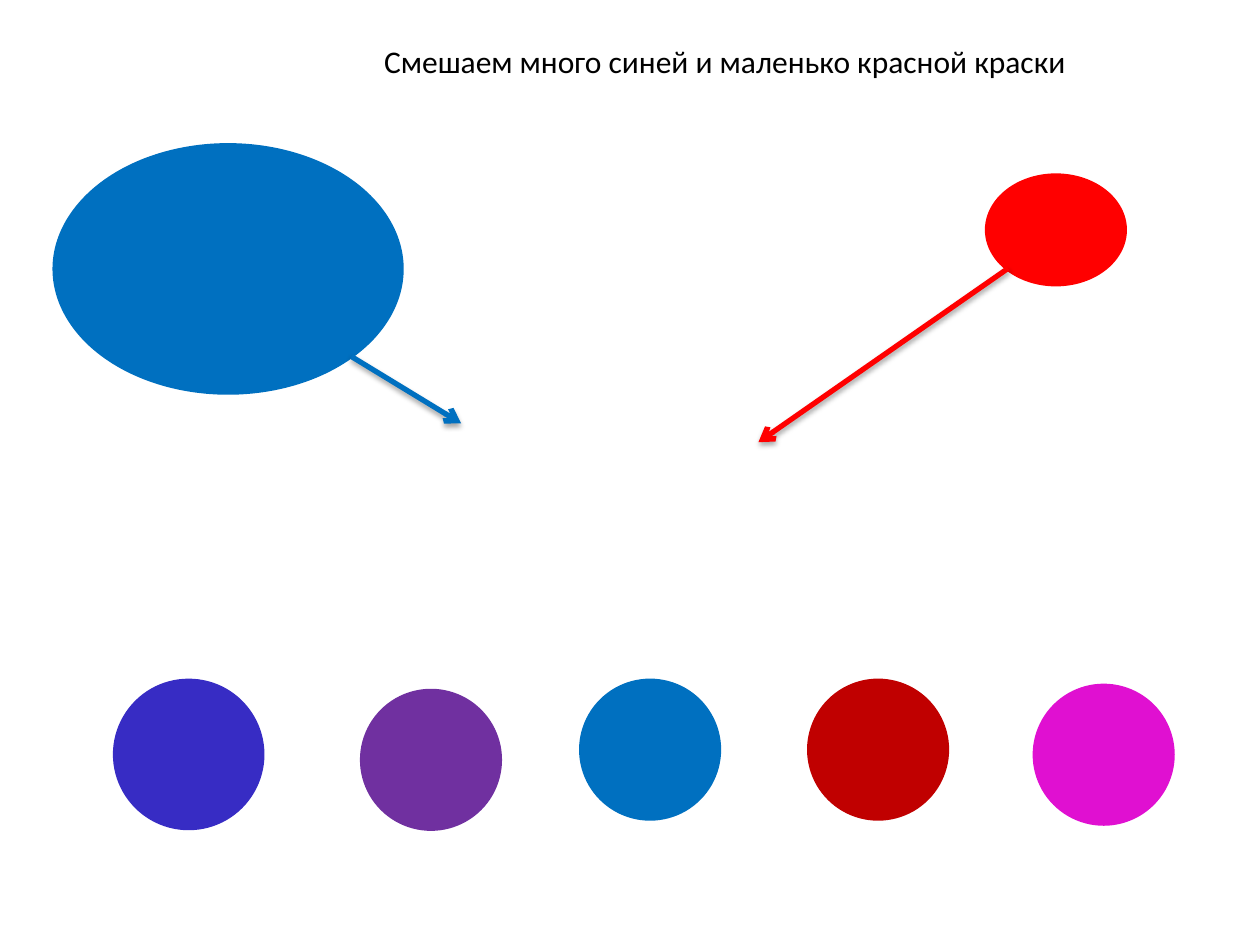
from lxml.etree import SubElement
from pptx import Presentation
from pptx.dml.color import RGBColor
from pptx.enum.shapes import MSO_CONNECTOR, MSO_SHAPE
from pptx.enum.text import MSO_AUTO_SIZE
from pptx.oxml.ns import qn
from pptx.util import Pt

COLORS = {
    "text": "000000",
    "blue": "0070C0",
    "red": "FF0000",
    "indigo": "372CC4",
    "purple": "7030A0",
    "crimson": "C00000",
    "magenta": "E010D1",
}


def rgb(name):
    return RGBColor.from_string(COLORS[name])


def add_blob(s, x, y, w, h, color):
    sp = s.shapes.add_shape(MSO_SHAPE.OVAL, Pt(x), Pt(y), Pt(w), Pt(h))
    sp.shadow.inherit = False
    sp.fill.solid()
    sp.fill.fore_color.rgb = rgb(color)
    sp.line.color.rgb = rgb(color)
    sp.line.width = Pt(2)


def add_arrow(s, x1, y1, x2, y2, color):
    cn = s.shapes.add_connector(MSO_CONNECTOR.STRAIGHT, Pt(x1), Pt(y1), Pt(x2), Pt(y2))
    cn.line.color.rgb = rgb(color)
    cn.line.width = Pt(3)
    SubElement(cn.line._get_or_add_ln(), qn("a:tailEnd"), type="arrow")
    # Soft shadow straight below the line
    effects = SubElement(cn._element.spPr, qn("a:effectLst"))
    shadow = SubElement(effects, qn("a:outerShdw"), blurRad=str(Pt(3.1)),
                        dist=str(Pt(1.8)), dir="5400000", rotWithShape="0")
    tint = SubElement(shadow, qn("a:srgbClr"), val=COLORS["text"])
    SubElement(tint, qn("a:alpha"), val="35000")


def add_title(s, x, y, w, h, text):
    tf = s.shapes.add_textbox(Pt(x), Pt(y), Pt(w), Pt(h)).text_frame
    tf.word_wrap = False
    tf.auto_size = MSO_AUTO_SIZE.SHAPE_TO_FIT_TEXT
    r = tf.paragraphs[0].add_run()
    r.text = text
    r.font.name = "Calibri"
    r.font.size = Pt(18)
    r.font.color.rgb = rgb("text")


def add_mixing(s, x, y):
    # Two paints, then the arrows that lead them together
    add_blob(s, x, y, 198.7, 141.8, "blue")
    add_blob(s, x + 532.8, y + 17.3, 79.2, 62.6, "red")
    add_arrow(s, x + 169.9, y + 121, x + 232.5, y + 159.1, "blue")
    add_arrow(s, x + 545, y + 70.6, x + 402.4, y + 169.9, "red")


def add_choices(s, x, y):
    # Possible results: offset from the corner, size, colour
    choices = [
        (0, 0, 84.6, "indigo"),
        (141.2, 5.8, 79.2, "purple"),
        (266.4, 0, 79.2, "blue"),
        (396.7, 0, 79.2, "crimson"),
        (525.6, 2.9, 79.2, "magenta"),
    ]
    for dx, dy, size, color in choices:
        add_blob(s, x + dx, y + dy, size, size, color)


def main():
    prs = Presentation()
    prs.slide_width, prs.slide_height = Pt(720), Pt(540)
    s = prs.slides.add_slide(prs.slide_layouts[6])
    add_mixing(s, 31, 82.8)
    add_choices(s, 65.5, 388.8)
    add_title(s, 212.4, 20.2, 409, 28.8, "Смешаем много синей и маленько красной краски")
    prs.save("out.pptx")


if __name__ == "__main__":
    main()
